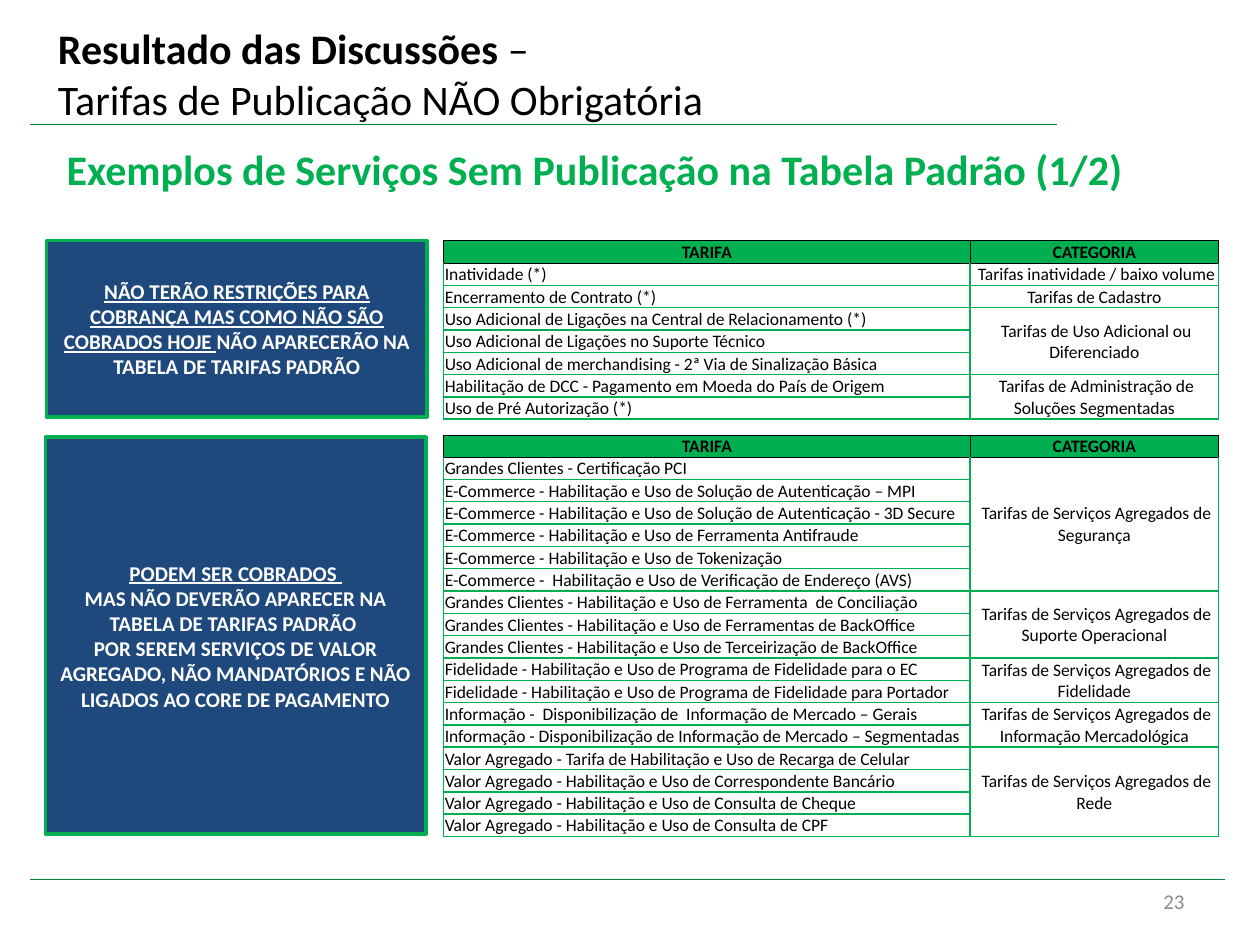
from lxml.etree import SubElement
from pptx import Presentation
from pptx.dml.color import RGBColor
from pptx.enum.shapes import MSO_CONNECTOR as Connector, MSO_SHAPE as Shape
from pptx.enum.text import MSO_ANCHOR as Anchor, PP_ALIGN as Align
from pptx.oxml.ns import qn
from pptx.util import Inches, Pt

COLORS = {
    "green": "00B050",
    "rule": "00843C",
    "navy": "1F497D",
    "white": "FFFFFF",
    "black": "000000",
    "gray": "8C8C8C",
}


def style(paragraph, size, color, bold=False, align=Align.LEFT):
    paragraph.alignment = align
    paragraph.font.name = "Calibri"
    paragraph.font.size = Pt(size)
    paragraph.font.bold = bold
    paragraph.font.color.rgb = RGBColor.from_string(COLORS[color])


def set_borders(cell, sides):
    properties = cell._tc.get_or_add_tcPr()
    for side, (color, width) in zip("LRTB", sides):
        line = SubElement(properties, qn(f"a:ln{side}"), w=str(Pt(width)))
        fill = SubElement(line, qn("a:solidFill"))
        SubElement(fill, qn("a:srgbClr"), val=COLORS[color])


prs = Presentation()
prs.slide_width = Inches(10)
prs.slide_height = Inches(7.5)
slide = prs.slides.add_slide(prs.slide_layouts[6])

for y, right in [(0.99, 8.39), (6.98, 9.72)]:
    rule = slide.shapes.add_connector(
        Connector.STRAIGHT, Inches(0.24), Inches(y), Inches(right), Inches(y))
    rule.line.color.rgb = RGBColor.from_string(COLORS["rule"])
    rule.line.width = Pt(0.75)
    SubElement(rule._element.spPr, qn("a:effectLst"))

page_number = slide.shapes.add_textbox(
    Inches(7.17), Inches(6.95), Inches(2.33), Inches(0.4)).text_frame
page_number.word_wrap = True
page_number.vertical_anchor = Anchor.MIDDLE
page_number.text = "23"
style(page_number.paragraphs[0], 12, "gray", align=Align.RIGHT)

rules = [
    (0.37, 1.91, 1.4, [
        [("NÃO TERÃO RESTRIÇÕES PARA COBRANÇA MAS COMO NÃO SÃO COBRADOS HOJE ", True),
         ("NÃO APARECERÃO NA TABELA DE TARIFAS PADRÃO", False)],
    ]),
    (0.36, 3.47, 3.15, [
        [("PODEM SER COBRADOS ", True)],
        [("MAS NÃO DEVERÃO APARECER NA TABELA DE TARIFAS PADRÃO ", False)],
        [("POR SEREM SERVIÇOS DE VALOR AGREGADO, NÃO MANDATÓRIOS E NÃO "
          "LIGADOS AO CORE DE PAGAMENTO", False)],
    ]),
]
for left, top, height, paragraphs in rules:
    box = slide.shapes.add_shape(
        Shape.RECTANGLE, Inches(left), Inches(top), Inches(3.02), Inches(height))
    box.shadow.inherit = False
    box.fill.solid()
    box.fill.fore_color.rgb = RGBColor.from_string(COLORS["navy"])
    box.line.color.rgb = RGBColor.from_string(COLORS["green"])
    box.line.width = Pt(2)
    frame = box.text_frame
    frame.word_wrap = True
    frame.vertical_anchor = Anchor.MIDDLE
    for index, runs in enumerate(paragraphs):
        paragraph = frame.add_paragraph() if index else frame.paragraphs[0]
        style(paragraph, 12, "white", True, Align.CENTER)
        for text, underlined in runs:
            run = paragraph.add_run()
            run.text = text
            run.font.underline = underlined

fee_tables = [
    (1.91, [
        (" Tarifas inatividade / baixo volume", ["Inatividade (*)"]),
        ("Tarifas de Cadastro", ["Encerramento de Contrato (*)"]),
        (" Tarifas de Uso Adicional ou Diferenciado", [
            "Uso Adicional de Ligações na Central de Relacionamento (*)",
            "Uso Adicional de Ligações no Suporte Técnico",
            "Uso Adicional de merchandising - 2ª Via de Sinalização Básica",
        ]),
        (" Tarifas de Administração de Soluções Segmentadas", [
            "Habilitação de DCC - Pagamento em Moeda do País de Origem",
            "Uso de Pré Autorização (*)",
        ]),
    ]),
    (3.45, [
        (" Tarifas de Serviços Agregados de Segurança", [
            "Grandes Clientes - Certificação PCI",
            "E-Commerce - Habilitação e Uso de Solução de Autenticação – MPI",
            "E-Commerce - Habilitação e Uso de Solução de Autenticação - 3D Secure",
            "E-Commerce - Habilitação e Uso de Ferramenta Antifraude",
            "E-Commerce - Habilitação e Uso de Tokenização",
            "E-Commerce -  Habilitação e Uso de Verificação de Endereço (AVS)",
        ]),
        (" Tarifas de Serviços Agregados de Suporte Operacional", [
            "Grandes Clientes - Habilitação e Uso de Ferramenta  de Conciliação",
            "Grandes Clientes - Habilitação e Uso de Ferramentas de BackOffice",
            "Grandes Clientes - Habilitação e Uso de Terceirização de BackOffice",
        ]),
        (" Tarifas de Serviços Agregados de Fidelidade", [
            "Fidelidade - Habilitação e Uso de Programa de Fidelidade para o EC",
            "Fidelidade - Habilitação e Uso de Programa de Fidelidade para Portador",
        ]),
        (" Tarifas de Serviços Agregados de Informação Mercadológica", [
            "Informação -  Disponibilização de  Informação de Mercado – Gerais",
            "Informação - Disponibilização de Informação de Mercado – Segmentadas",
        ]),
        (" Tarifas de Serviços Agregados de Rede", [
            "Valor Agregado - Tarifa de Habilitação e Uso de Recarga de Celular",
            "Valor Agregado - Habilitação e Uso de Correspondente Bancário",
            "Valor Agregado - Habilitação e Uso de Consulta de Cheque",
            "Valor Agregado - Habilitação e Uso de Consulta de CPF",
        ]),
    ]),
]
thin, thick = ("black", 0.25), ("green", 1)
row_height = Inches(0.17)
for top, categories in fee_tables:
    row_count = 1 + sum(len(fees) for _, fees in categories)
    table = slide.shapes.add_table(
        row_count, 2, Inches(3.52), Inches(top), Inches(6.15),
        row_height * row_count).table
    table.horz_banding = False
    table.first_row = False
    table.columns[0].width = Inches(4.18)
    table.columns[1].width = Inches(1.97)

    table.cell(0, 0).text = "TARIFA"
    table.cell(0, 1).text = "CATEGORIA"
    first = 1
    for category, fees in categories:
        for row, fee in enumerate(fees, first):
            table.cell(row, 0).text = fee
        table.cell(first, 1).text = category
        if len(fees) > 1:
            table.cell(first, 1).merge(table.cell(first + len(fees) - 1, 1))
        first += len(fees)

    for row in range(row_count):
        table.rows[row].height = row_height
        for column in range(2):
            cell = table.cell(row, column)
            cell.margin_left = cell.margin_top = cell.margin_right = Inches(0.01)
            cell.margin_bottom = 0
            cell.vertical_anchor = Anchor.MIDDLE
            centered = row == 0 or column == 1
            style(cell.text_frame.paragraphs[0], 10, "black", row == 0,
                  Align.CENTER if centered else Align.LEFT)
            if row == 0:
                set_borders(cell, [thin] * 4)
                cell.fill.solid()
                cell.fill.fore_color.rgb = RGBColor.from_string(COLORS["green"])
            else:
                set_borders(cell, [thick, thick, thin if row == 1 else thick, thick])
                cell.fill.background()

subtitle = slide.shapes.add_textbox(
    Inches(0.43), Inches(1.09), Inches(9.45), Inches(0.5)).text_frame
subtitle.word_wrap = True
subtitle.text = "Exemplos de Serviços Sem Publicação na Tabela Padrão (1/2)"
style(subtitle.paragraphs[0], 24, "green", True)

title = slide.shapes.add_textbox(
    Inches(0.42), Inches(0.29), Inches(7.91), Inches(0.58)).text_frame
title.word_wrap = True
title.vertical_anchor = Anchor.MIDDLE
title.margin_left = title.margin_right = Inches(0.04)
title.margin_top = title.margin_bottom = Inches(0.04)
heading = title.paragraphs[0]
style(heading, 24, "black")
topic = heading.add_run()
topic.text = "Resultado das Discussões "
topic.font.bold = True
heading.add_run().text = "–"
heading.add_line_break()
heading.add_run().text = "Tarifas de Publicação NÃO Obrigatória"

prs.save("out.pptx")
